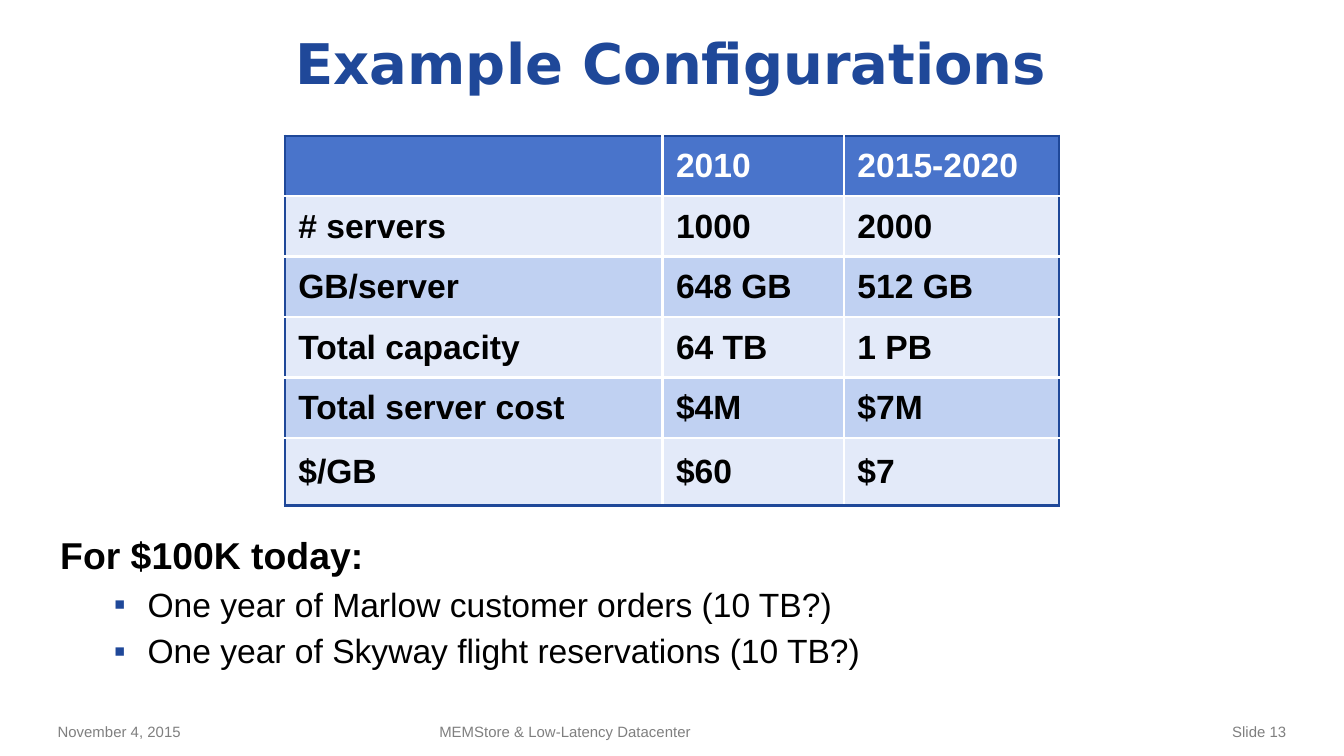
from lxml.etree import SubElement
from pptx import Presentation
from pptx.dml.color import RGBColor
from pptx.enum.text import MSO_ANCHOR, PP_ALIGN
from pptx.oxml import parse_xml
from pptx.oxml.ns import nsdecls, qn
from pptx.util import Inches, Pt

NAVY = RGBColor(0x1F, 0x48, 0x99)
BLUE = RGBColor(0x49, 0x74, 0xCB)
LIGHT = RGBColor(0xC0, 0xD1, 0xF2)
PALE = RGBColor(0xE3, 0xEA, 0xF9)
WHITE = RGBColor(0xFF, 0xFF, 0xFF)
BLACK = RGBColor(0x00, 0x00, 0x00)
GRAY = RGBColor(0x7F, 0x7F, 0x7F)

CONFIGURATIONS = [
    ("", "2010", "2015-2020"),
    ("# servers", "1000", "2000"),
    ("GB/server", "648 GB", "512 GB"),
    ("Total capacity", "64 TB", "1 PB"),
    ("Total server cost", "$4M", "$7M"),
    ("$/GB", "$60", "$7"),
]
ORDERS = [
    "One year of Marlow customer orders (10 TB?)",
    "One year of Skyway flight reservations (10 TB?)",
]


def write(para, text, size=18, color=BLACK, bold=False, font="Arial",
          align=PP_ALIGN.LEFT, before=0):
    para.alignment = align
    para.space_before = Pt(before)
    span = para.add_run()
    span.text = text
    span.font.name = font
    span.font.size = Pt(size)
    span.font.bold = bold
    span.font.color.rgb = color


class SlideBuilder:
    def __init__(self, page):
        self.page = page

    def text_box(self, left, top, width, height, anchor=MSO_ANCHOR.MIDDLE):
        box = self.page.shapes.add_textbox(
            Inches(left), Inches(top), Inches(width), Inches(height))
        box.text_frame.word_wrap = True
        box.text_frame.vertical_anchor = anchor
        return box.text_frame

    def label(self, left, top, width, height, text, **style):
        write(self.text_box(left, top, width, height).paragraphs[0], text, **style)

    def bullet(self, frame, text):
        para = frame.add_paragraph()
        para.level = 1
        write(para, text, before=3.5)
        properties = para._p.get_or_add_pPr()
        properties.set("marL", str(Inches(0.65)))
        properties.set("indent", str(Inches(-0.25)))
        color = SubElement(properties, qn("a:buClr"))
        SubElement(color, qn("a:srgbClr"), val=str(NAVY))
        SubElement(properties, qn("a:buFont"), typeface="Arial")
        SubElement(properties, qn("a:buChar"), char="▪")

    def borders(self, cell, **colors):
        properties = cell._tc.get_or_add_tcPr()
        for index, (side, color) in enumerate(colors.items()):
            properties.insert(index, parse_xml(
                f'<a:ln{side} {nsdecls("a")} w="{Pt(1.5)}"><a:solidFill>'
                f'<a:srgbClr val="{color}"/></a:solidFill></a:ln{side}>'))

    def table(self, left, top, widths, heights, rows):
        table = self.page.shapes.add_table(
            len(rows), len(widths), Inches(left), Inches(top),
            Inches(sum(widths)), Inches(sum(heights))).table
        table.horz_banding = False
        for column, width in zip(table.columns, widths):
            column.width = Inches(width)
        last_row, last_column = len(rows) - 1, len(widths) - 1
        for r, (values, height) in enumerate(zip(rows, heights)):
            table.rows[r].height = Inches(height)
            fill = BLUE if r == 0 else PALE if r % 2 else LIGHT
            for c, text in enumerate(values):
                cell = table.cell(r, c)
                cell.vertical_anchor = MSO_ANCHOR.MIDDLE
                cell.fill.solid()
                cell.fill.fore_color.rgb = fill
                if text:
                    write(cell.text_frame.paragraphs[0], text, bold=True,
                          color=BLACK if r else WHITE)
                self.borders(cell,
                             L=WHITE if c else NAVY,
                             R=NAVY if c == last_column else WHITE,
                             T=WHITE if r else NAVY,
                             B=NAVY if r == last_row else WHITE)


def main():
    deck = Presentation()
    deck.slide_width = Inches(10)
    deck.slide_height = deck.slide_width * 9 // 16
    builder = SlideBuilder(deck.slides.add_slide(deck.slide_layouts[6]))

    footer = {"size": 8, "color": GRAY}
    builder.label(0.33, 5.32, 2.5, 0.24, "November 4, 2015", **footer)
    builder.label(3.17, 5.32, 3.75, 0.24, "MEMStore & Low-Latency Datacenter", **footer)
    builder.label(7.17, 5.32, 2.5, 0.24, "Slide 13", align=PP_ALIGN.RIGHT, **footer)
    builder.label(0.33, 0.16, 9.33, 0.6, "Example Configurations", size=30,
                  color=NAVY, bold=True, font="DejaVu Sans", align=PP_ALIGN.CENTER)

    body = builder.text_box(0.35, 3.91, 9.3, 1.15, MSO_ANCHOR.TOP)
    write(body.paragraphs[0], "For $100K today:", size=20, bold=True, before=9)
    for order in ORDERS:
        builder.bullet(body, order)

    builder.table(2.12, 1.01, [2.81, 1.35, 1.6], [0.45] * 5 + [0.5], CONFIGURATIONS)
    deck.save("out.pptx")


if __name__ == "__main__":
    main()
